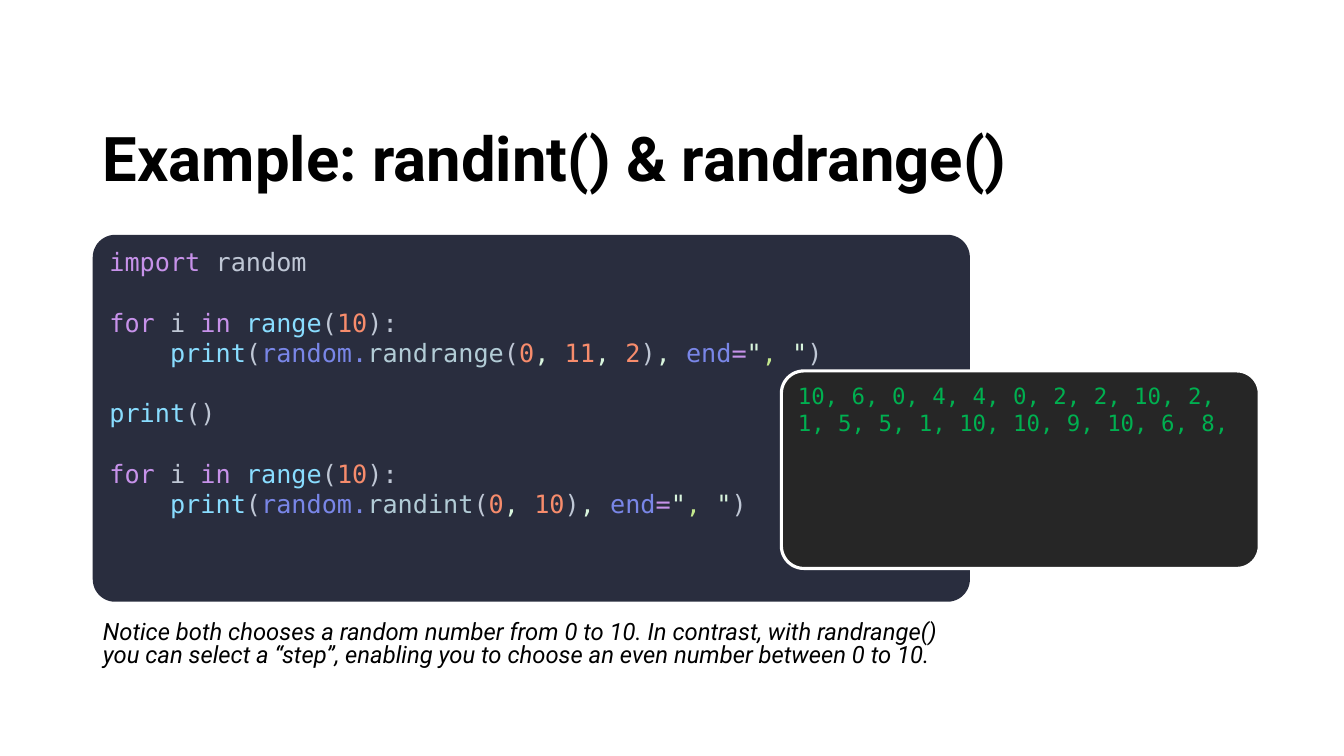
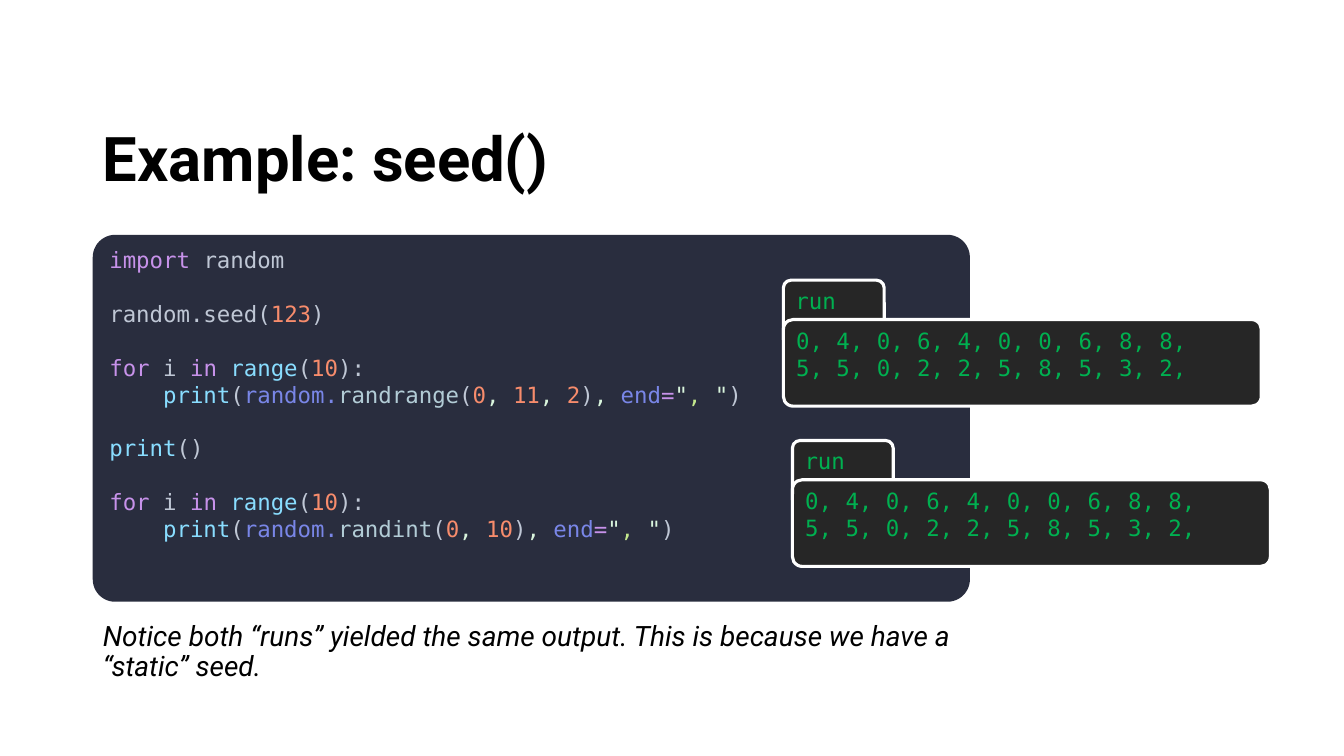
"""Build two slides of Python random examples with code and console panels."""
from dataclasses import dataclass

from lxml.etree import SubElement
from pptx import Presentation
from pptx.dml.color import RGBColor
from pptx.enum.shapes import MSO_SHAPE as SHAPE
from pptx.enum.text import MSO_ANCHOR as ANCHOR, MSO_AUTO_SIZE as AUTO, PP_ALIGN as ALIGN
from pptx.oxml import parse_xml
from pptx.oxml.ns import nsdecls, qn
from pptx.util import Inches, Pt

BLACK = RGBColor(0x00, 0x00, 0x00)
WHITE = RGBColor(0xFF, 0xFF, 0xFF)
EDITOR = RGBColor(0x29, 0x2D, 0x3E)
CONSOLE = RGBColor(0x26, 0x26, 0x26)
GREEN = RGBColor(0x00, 0xB0, 0x50)
PURPLE = RGBColor(0xC7, 0x92, 0xEA)
GREY = RGBColor(0xBF, 0xC7, 0xD5)
CYAN = RGBColor(0x89, 0xDD, 0xFF)
ORANGE = RGBColor(0xF7, 0x8C, 0x6C)
BLUE = RGBColor(0x79, 0x86, 0xE7)
TEAL = RGBColor(0xB2, 0xCC, 0xD6)
MINT = RGBColor(0xD9, 0xF5, 0xDD)
LIME = RGBColor(0xC3, 0xE8, 0x8D)

SANS = "Roboto"
MONO = "DejaVu Sans Mono"
LEFT = 0.92
CODE_W = 8.7
CODE_RADIUS = 0.061
CONSOLE_RADIUS = 0.114
CONSOLE_W = 4.74
LINE_HEIGHT = 1.2


@dataclass(frozen=True)
class Token:
    """A piece of text in one colour."""
    text: str
    color: RGBColor


@dataclass(frozen=True)
class Box:
    """A rectangle in inches."""
    left: float
    top: float
    width: float
    height: float

    def emu(self) -> tuple:
        """Return the four lengths for python-pptx."""
        return tuple(Inches(v) for v in (self.left, self.top, self.width, self.height))


@dataclass(frozen=True)
class Console:
    """A console panel and the lines it prints."""
    box: Box
    lines: tuple


@dataclass(frozen=True)
class Example:
    """The content of one slide."""
    title: str
    blocks: list
    code_size: int
    caption: str
    caption_size: int
    caption_spacing: float
    consoles: list


TITLE_BOX = Box(LEFT, 0.88, 11.5, 1.45)
CODE_BOX = Box(LEFT, 2.33, CODE_W, 3.64)
CAPTION_BOX = Box(LEFT, 6.12, CODE_W, 0.74)


def print_line(func: str, *args: str) -> list:
    """Return the tokens of an indented print of a random call."""
    numbers = []
    for i, arg in enumerate(args):
        if i:
            numbers.append(Token(", ", MINT))
        numbers.append(Token(arg, ORANGE))
    return [Token("    print", CYAN), Token("(", GREY), Token("random.", BLUE),
            Token(func, TEAL), Token("(", GREY), *numbers, Token(")", GREY),
            Token(",", MINT), Token(" end", BLUE), Token("=", PURPLE),
            Token('"', MINT), Token(", ", LIME), Token('"', MINT), Token(")", GREY)]


IMPORT = [[Token("import", PURPLE), Token(" random", GREY)]]
SEED = [[Token("random.seed(", GREY), Token("123", ORANGE), Token(")", GREY)]]
LOOP = [Token("for ", PURPLE), Token("i ", GREY), Token("in ", PURPLE),
        Token("range", CYAN), Token("(", GREY), Token("10", ORANGE), Token("):", GREY)]
LOOPS = [[LOOP, print_line("randrange", "0", "11", "2")],
         [[Token("print", CYAN), Token("()", GREY)]],
         [LOOP, print_line("randint", "0", "10")]]


def write(tf, blocks: list, *, size: float, font: str, bold: bool = False,
          italic: bool = False, spacing: float = 1.0, anchor=ANCHOR.TOP) -> None:
    """Write blocks of token lines, with one line of space between blocks."""
    tf.word_wrap = True
    tf.auto_size = AUTO.NONE
    tf.vertical_anchor = anchor
    p = None
    for block in blocks:
        for i, line in enumerate(block):
            gap = size * LINE_HEIGHT if p is not None and i == 0 else 0
            p = tf.paragraphs[0] if p is None else tf.add_paragraph()
            pPr = p._p.get_or_add_pPr()
            pPr.set("marL", "0")
            pPr.set("indent", "0")
            SubElement(pPr, qn("a:buNone"))
            p.alignment = ALIGN.LEFT
            p.line_spacing = spacing
            p.space_before = Pt(gap)
            for token in line:
                r = p.add_run()
                r.text = token.text
                r.font.name = font
                r.font.size = Pt(size)
                r.font.bold = bold
                r.font.italic = italic
                r.font.color.rgb = token.color


def place(s, box: Box) -> None:
    """Move a placeholder to a box."""
    s.left, s.top, s.width, s.height = box.emu()


def round_corners(s, radius: float) -> None:
    """Give a placed placeholder a rounded outline."""
    s._element.spPr.insert(1, parse_xml(
        f'<a:prstGeom {nsdecls("a")} prst="roundRect"><a:avLst>'
        f'<a:gd name="adj" fmla="val {round(radius * 100000)}"/>'
        '</a:avLst></a:prstGeom>'))


def add_console(slide, console: Console) -> None:
    """Draw a console panel with its printed lines."""
    s = slide.shapes.add_shape(SHAPE.ROUNDED_RECTANGLE, *console.box.emu())
    s.adjustments[0] = CONSOLE_RADIUS
    s.shadow.inherit = False
    s.fill.solid()
    s.fill.fore_color.rgb = CONSOLE
    s.line.color.rgb = WHITE
    s.line.width = Pt(2.25)
    write(s.text_frame, [[[Token(line, GREEN)] for line in console.lines]],
          size=16, font=MONO)


def run_consoles(left: float, top: float) -> list:
    """Return the tab and the output panel of one run."""
    return [Console(Box(left, top, 1, 0.66), ("run",)),
            Console(Box(left, top + 0.39, CONSOLE_W, 0.86),
                    ("0, 4, 0, 6, 4, 0, 0, 6, 8, 8,", "5, 5, 0, 2, 2, 5, 8, 5, 3, 2,"))]


def add_example(prs, example: Example) -> None:
    """Add a slide with title, code, caption and consoles."""
    slide = prs.slides.add_slide(prs.slide_layouts[3])
    title, code, caption = slide.placeholders
    place(title, TITLE_BOX)
    write(title.text_frame, [[[Token(example.title, BLACK)]]], size=44, font=SANS,
          bold=True, spacing=0.9, anchor=ANCHOR.MIDDLE)
    place(code, CODE_BOX)
    round_corners(code, CODE_RADIUS)
    code.fill.solid()
    code.fill.fore_color.rgb = EDITOR
    write(code.text_frame, example.blocks, size=example.code_size, font=MONO)
    place(caption, CAPTION_BOX)
    write(caption.text_frame, [[[Token(example.caption, BLACK)]]],
          size=example.caption_size, font=SANS, italic=True,
          spacing=example.caption_spacing)
    for console in example.consoles:
        add_console(slide, console)


EXAMPLES = [
    Example("Example: randint() & randrange()", [IMPORT, *LOOPS], 18,
            "Notice both chooses a random number from 0 to 10. In contrast, with "
            "randrange() you can select a “step”, enabling you to choose an even "
            "number between 0 to 10.", 17, 0.8,
            [Console(Box(7.75, 3.68, CONSOLE_W, 1.96),
                     ("10, 6, 0, 4, 4, 0, 2, 2, 10, 2,",
                      "1, 5, 5, 1, 10, 10, 9, 10, 6, 8,"))]),
    Example("Example: seed()", [IMPORT, SEED, *LOOPS], 16,
            "Notice both “runs” yielded the same output. This is because we have a "
            "“static” seed.", 20, 0.9,
            [*run_consoles(7.77, 2.78), *run_consoles(7.86, 4.37)]),
]


def main() -> None:
    """Build and save the presentation."""
    prs = Presentation()
    prs.slide_width, prs.slide_height = Inches(13.33), Inches(7.5)
    for example in EXAMPLES:
        add_example(prs, example)
    prs.save("out.pptx")


if __name__ == "__main__":
    main()
